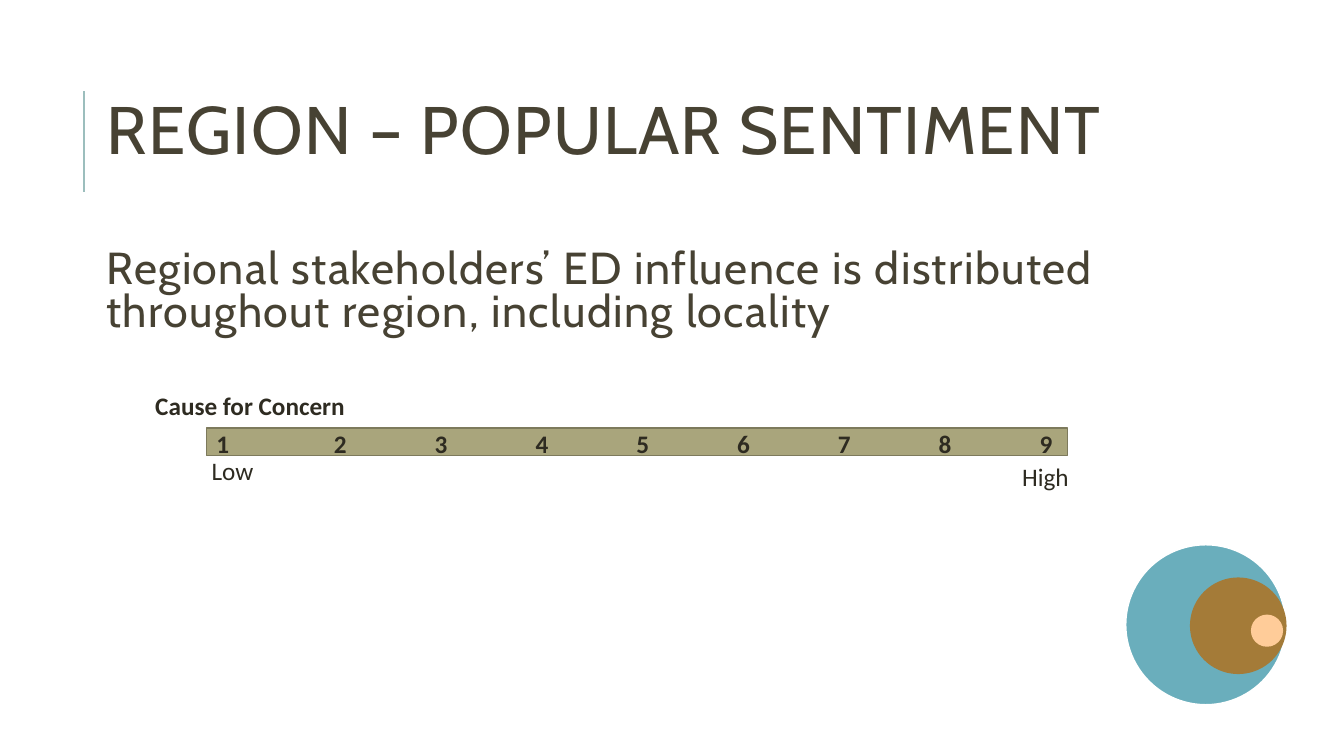
import pptx
import pptx.dml.color
import pptx.enum.shapes
import pptx.enum.text
import pptx.oxml
import pptx.oxml.ns
import pptx.util
from lxml import etree

Pt = pptx.util.Pt
SHAPES = pptx.enum.shapes.MSO_SHAPE
HEADING = {"name": "Cabin", "size": Pt(48)}
STATEMENT = {"name": "Cabin", "size": Pt(32)}
LABEL = {"name": "Calibri", "size": Pt(18), "bold": False}
STRONG = {**LABEL, "bold": True}
LABEL_PARAGRAPH = {"line_spacing": 0.9, "space_before": Pt(12), "space_after": Pt(2)}
TIGHT_PARAGRAPH = {"line_spacing": 0.8, "space_before": Pt(0)}
BROWN = "474233"
DARK = "2E2B21"


def rgb(value):
    return pptx.dml.color.RGBColor.from_string(value)


def apply(target, values):
    for name, value in values.items():
        setattr(target, name, value)


def place(sp, box):
    apply(sp, dict(zip(("left", "top", "width", "height"), map(Pt, box))))


def write(sp, text, font, color, paragraph, inset=(7.2, 3.6), spacing=0):
    tf = sp.text_frame
    x, y = map(Pt, inset)
    apply(tf, {
        "word_wrap": True,
        "auto_size": pptx.enum.text.MSO_AUTO_SIZE.NONE,
        "vertical_anchor": pptx.enum.text.MSO_ANCHOR.MIDDLE,
        "margin_left": x, "margin_right": x,
        "margin_top": y, "margin_bottom": y,
    })
    p = tf.paragraphs[0]
    apply(p, {"alignment": pptx.enum.text.PP_ALIGN.LEFT, **paragraph})
    r = p.add_run()
    r.text = text
    apply(r.font, font)
    r.font.color.rgb = rgb(color)
    if spacing:
        r.font._element.set("spc", str(spacing * 100))
    return p


def add_title(slide, text, box):
    sp = slide.shapes.title
    place(sp, box)
    write(sp, text, HEADING, BROWN, TIGHT_PARAGRAPH, spacing=1)


def add_text(slide, text, box, *style, **options):
    sp = slide.shapes.add_textbox(*map(Pt, box))
    return write(sp, text, *style, **options)


def add_label(slide, text, box, font=LABEL):
    add_text(slide, text, box, font, DARK, LABEL_PARAGRAPH, inset=(3.6, 3.6))


def add_scale_numbers(slide, box, first_stop, step):
    text = "\t".join(str(n) for n in range(1, 10))
    p = add_text(slide, text, box, STRONG, DARK, {})
    tabs = etree.SubElement(p._p.get_or_add_pPr(), pptx.oxml.ns.qn("a:tabLst"))
    for i in range(8):
        stop = Pt(first_stop + i * step)
        etree.SubElement(tabs, pptx.oxml.ns.qn("a:tab"), pos=str(stop), algn="l")


def add_figure(slide, kind, box, fill, line=None):
    sp = slide.shapes.add_shape(kind, *map(Pt, box))
    sp.shadow.inherit = False
    sp.fill.solid()
    sp.fill.fore_color.rgb = rgb(fill)
    if line:
        sp.line.color.rgb = rgb(line)
        sp.line.width = Pt(1.25)
    else:
        sp.line.fill.background()


def add_circle(slide, left, top, size, fill, line=None):
    add_figure(slide, SHAPES.OVAL, (left, top, size, size), fill, line)


def add_rule(slide, x, top, bottom, color):
    kind = pptx.enum.shapes.MSO_CONNECTOR.STRAIGHT
    sp = slide.shapes.add_connector(kind, Pt(x), Pt(bottom), Pt(x), Pt(top))
    sp.line.color.rgb = rgb(color)
    sp.line.width = Pt(1.5)
    etree.SubElement(sp._element.spPr, pptx.oxml.ns.qn("a:effectLst"))


def main():
    prs = pptx.Presentation()
    apply(prs, {"slide_width": Pt(960), "slide_height": Pt(540)})
    slide = prs.slides.add_slide(prs.slide_layouts[5])

    add_rule(slide, 60, 65, 137, "9CBEBD")
    add_title(slide, "REGION – POPULAR SENTIMENT", (69, 70, 822, 52.5))
    add_text(
        slide,
        "Regional stakeholders’ ED influence is distributed throughout region, including locality",
        (69, 168, 822, 82), STATEMENT, BROWN, TIGHT_PARAGRAPH, spacing=1,
    )

    add_label(slide, "Cause for Concern", (107.3, 276.5, 157, 29), STRONG)
    add_figure(slide, SHAPES.RECTANGLE, (147.5, 306, 615, 19.5), "A9A57C", "7D7A5C")
    add_scale_numbers(slide, (147.5, 302, 700, 29), 84, 72)
    add_label(slide, "Low", (147.5, 323, 143, 29))
    add_label(slide, "High", (726.5, 327, 143, 29))

    add_circle(slide, 804, 389, 114.5, "6AAEBC", "FFFFFF")
    add_circle(slide, 850, 412.5, 69, "A47B38")
    add_circle(slide, 893.5, 439, 23, "FFCC99")

    prs.save("out.pptx")


if __name__ == "__main__":
    main()
